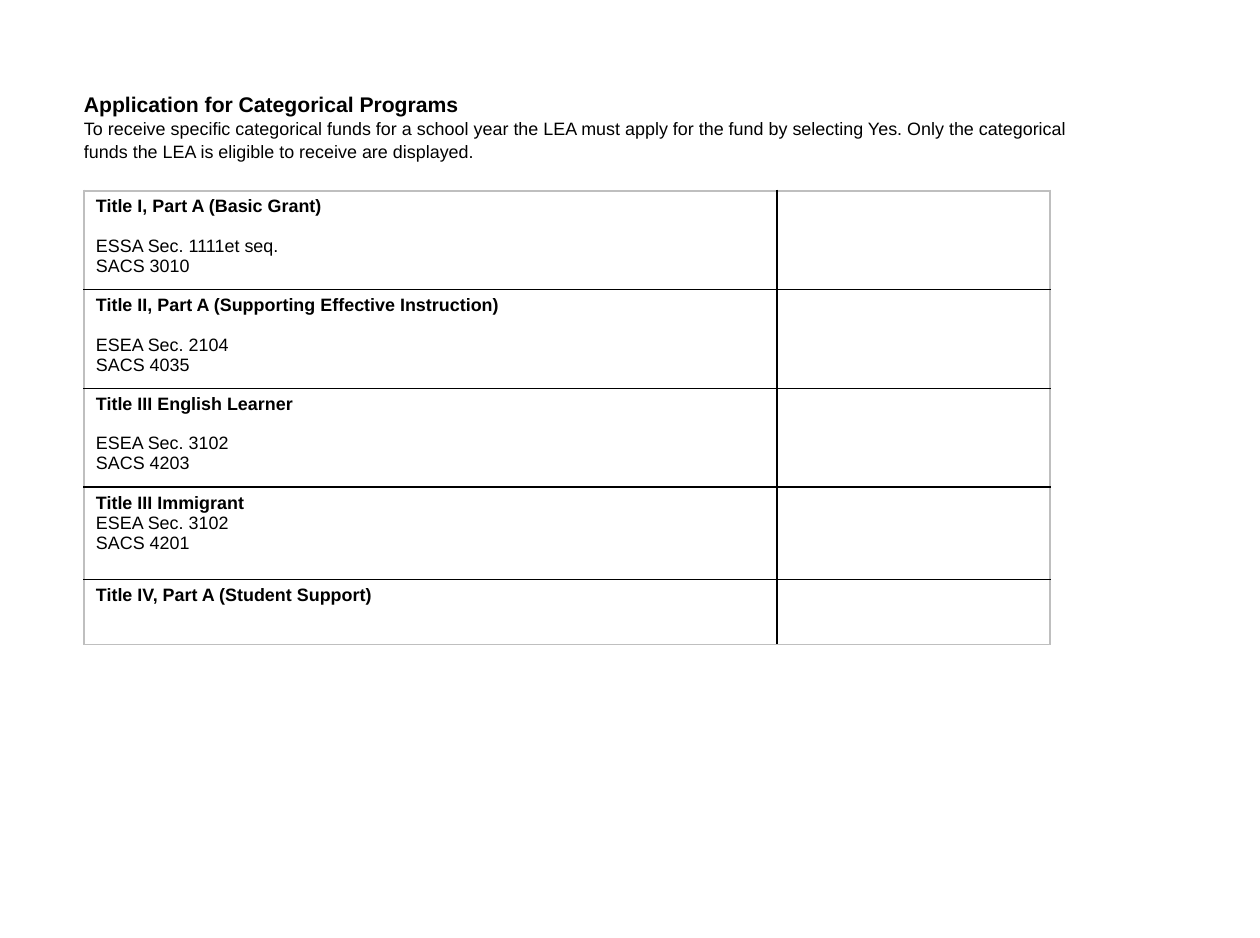
from lxml import etree
from pptx import Presentation
from pptx.dml.color import RGBColor
from pptx.enum.text import MSO_ANCHOR, MSO_AUTO_SIZE, PP_ALIGN
from pptx.oxml.ns import qn
from pptx.util import Cm, Pt

LEFT, TOP, NONE = PP_ALIGN.LEFT, MSO_ANCHOR.TOP, MSO_AUTO_SIZE.NONE

HEAD = "Application for Categorical Programs"
INTRO = ("To receive specific categorical funds for a school year the LEA must "
         "apply for the fund by selecting Yes. Only the categorical funds the "
         "LEA is eligible to receive are displayed.")
# name, detail lines, gap below the name (pt), row height (cm)
FUNDS = [
    ("Title I, Part A (Basic Grant)",
     ["ESSA Sec. 1111et seq.", "SACS 3010"], 12, 2.14),
    ("Title II, Part A (Supporting Effective Instruction)",
     ["ESEA Sec. 2104", "SACS 4035"], 12, 2.14),
    ("Title III English Learner",
     ["ESEA Sec. 3102", "SACS 4203"], 12, 2.14),
    ("Title III Immigrant",
     ["ESEA Sec. 3102", "SACS 4201"], 0, 2.01),
    ("Title IV, Part A (Student Support)", [], 0, 1.4),
]
COLS = [15.01, 5.92]
COLORS = {"text": "000000", "inner": "000000", "outer": "BFBFBF"}
INSETS = {"margin_left": Cm(0.25), "margin_right": Cm(0.25),
          "margin_top": Cm(0.13), "margin_bottom": Cm(0.13)}


def apply(obj, form):
    for name, value in form.items():
        setattr(obj, name, value)


def write(frame, lines):
    """Fill a text frame from (text, size, bold, paragraph format) tuples."""
    for i, (text, size, bold, form) in enumerate(lines):
        para = frame.add_paragraph() if i else frame.paragraphs[0]
        apply(para, {"alignment": LEFT, "space_before": Pt(0), **form})
        run = para.add_run()
        run.text = text
        apply(run.font, {"name": "Arial", "size": Pt(size), "bold": bold})
        run.font.color.rgb = RGBColor.from_string(COLORS["text"])


def border(cell, sides):
    """Draw cell edges; sides maps L, R, T, B to (colour key, width in pt)."""
    props = cell._tc.get_or_add_tcPr()
    for i, side in enumerate("LRTB"):
        key, width = sides[side]
        line = etree.Element(qn(f"a:ln{side}"), w=str(Pt(width)))
        fill = etree.SubElement(line, qn("a:solidFill"))
        etree.SubElement(fill, qn("a:srgbClr"), val=COLORS[key])
        props.insert(i, line)


def add_title(slide):
    title = slide.shapes.title
    apply(title, {"left": Cm(1.57), "top": Cm(1.8),
                  "width": Cm(22.53), "height": Cm(1.78)})
    frame = title.text_frame
    apply(frame, {"word_wrap": True, "auto_size": NONE,
                  "vertical_anchor": TOP, **INSETS})
    form = {"line_spacing": 1.07}
    write(frame, [(HEAD, 13, True, form), (INTRO, 11, False, form)])


def add_funds(slide):
    high = sum(fund[3] for fund in FUNDS)
    table = slide.shapes.add_table(len(FUNDS), len(COLS), Cm(1.83), Cm(4.13),
                                   Cm(sum(COLS)), Cm(high)).table
    apply(table, {"first_row": False, "horz_banding": False})
    for col, width in zip(table.columns, COLS):
        col.width = Cm(width)
    last = len(FUNDS) - 1
    for r, (name, lines, gap, height) in enumerate(FUNDS):
        table.rows[r].height = Cm(height)
        for c in range(len(COLS)):
            cell = table.cell(r, c)
            apply(cell, INSETS)
            cell.fill.background()
            outer, wall, rule = ("outer", 1.5), ("inner", 1.5), ("inner", 1)
            border(cell, {"L": wall if c else outer,
                          "R": outer if c else wall,
                          "T": rule if r else outer,
                          "B": rule if r < last else ("outer", 1)})
        rows = [(name, 11, True, {})]
        for i, line in enumerate(lines):
            rows.append((line, 11, False,
                         {"space_before": Pt(0 if i else gap)}))
        write(table.cell(r, 0).text_frame, rows)


def main():
    deck = Presentation()
    apply(deck, {"slide_width": Cm(27.31), "slide_height": Cm(20.32)})
    slide = deck.slides.add_slide(deck.slide_layouts.get_by_name("Title Only"))
    add_title(slide)
    add_funds(slide)
    deck.save("out.pptx")


if __name__ == "__main__":
    main()
